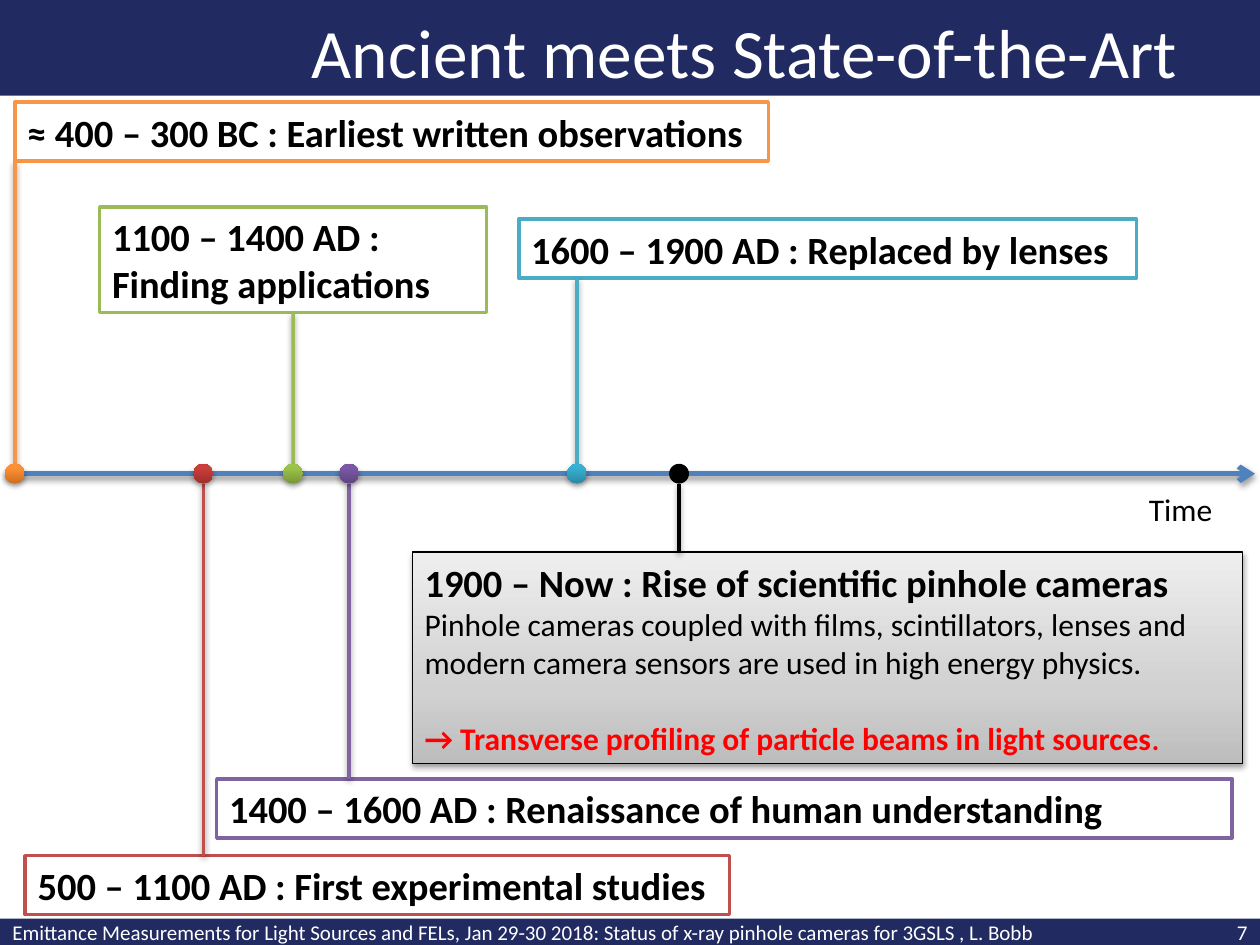
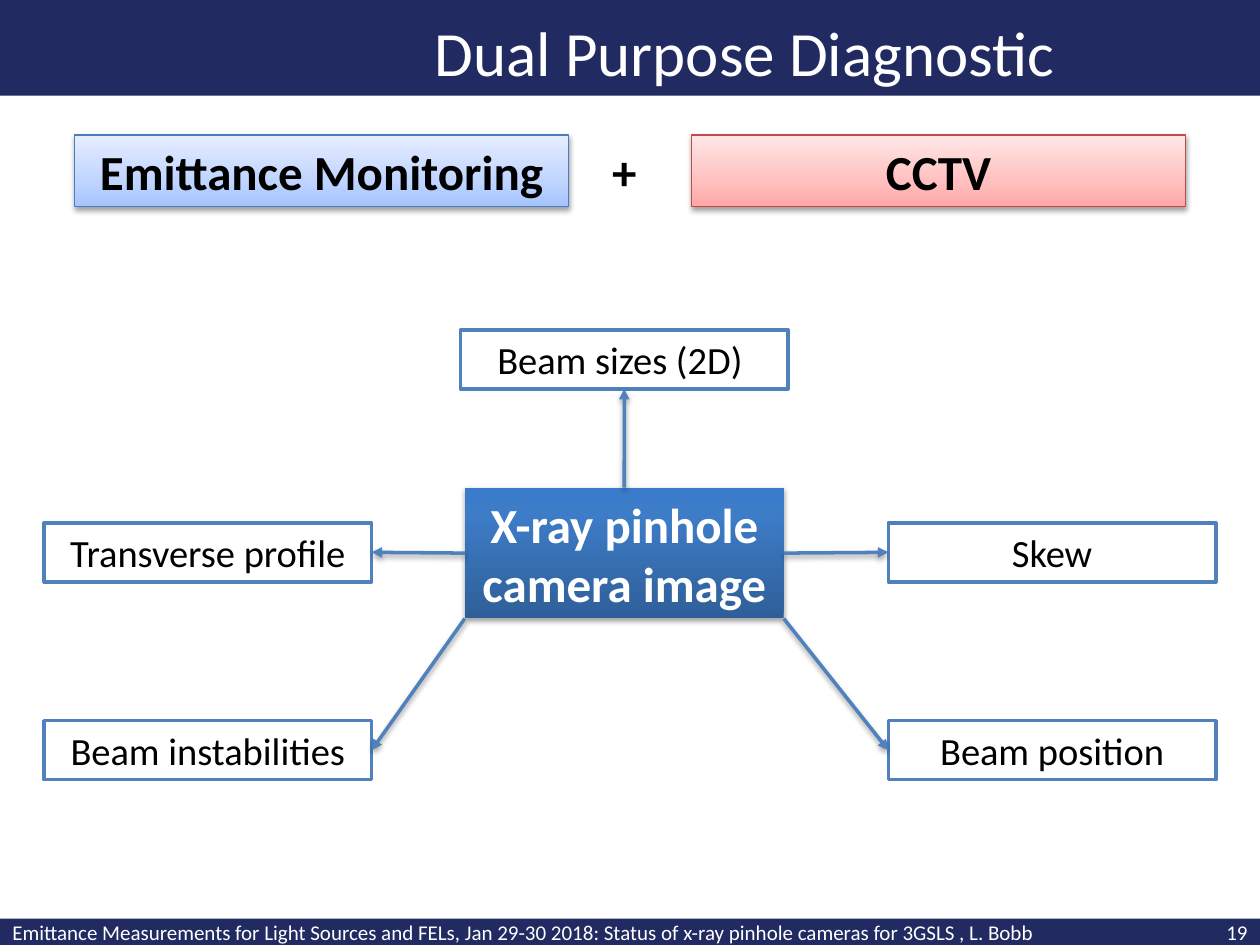
from lxml import etree
from pptx import Presentation
from pptx import util as u
from pptx.dml.color import RGBColor
from pptx.enum import shapes, text
from pptx.oxml import parse_xml
from pptx.oxml.ns import nsdecls, qn

FONT = "Calibri"
C = {
    "navy": "212B61", "white": "FFFFFF", "black": "000000", "alert": "FF0000",
    "blue": "4F81BD", "red": "C0504D", "green": "9BBB59",
    "purple": "8064A2", "teal": "4BACC6", "orange": "F79646",
    "blue edge": "4B7EBC", "red edge": "BF4C48",
}
# Middle stop in percent, then the colours from bottom to top
GRADIENTS = {
    "orange": (80, "CC6E20", "FF9034", "FF9136"),
    "red": (80, "9C2F2D", "CB3E3A", "CE3B37"),
    "green": (80, "779737", "9BC348", "9DC746"),
    "purple": (80, "5F4480", "7B58A6", "7C57A8"),
    "teal": (80, "2A88A2", "37B1D2", "34B4D6"),
    "blue": (80, "2F5F99", "3D7CC7", "3A7CCB"),
    "pale grey": (35, "BDBDBD", "D1D1D1", "EEEEEE"),
    "pale blue": (35, "A4C4FF", "BFD4FF", "E6EEFF"),
    "pale red": (35, "FFA6A5", "FFC0BF", "FFE7E7"),
}
SHADOW = (f'<a:effectLst {nsdecls("a")}><a:outerShdw blurRad="40000" dist="21000" '
          'dir="5400000" rotWithShape="0"><a:srgbClr val="000000">'
          '<a:alpha val="37000"/></a:srgbClr></a:outerShdw></a:effectLst>')
LEFT, CENTER, RIGHT = text.PP_ALIGN.LEFT, text.PP_ALIGN.CENTER, text.PP_ALIGN.RIGHT
RECT, OVAL = shapes.MSO_SHAPE.RECTANGLE, shapes.MSO_SHAPE.OVAL
TOP, LEFT_SIDE, BOTTOM, RIGHT_SIDE = range(4)


def add_box(s, at, paras=(), fill=None, grad=None, line=None, weight=2,
            kind=RECT, align=LEFT):
    """Add a shape, or a text box if it has neither fill nor gradient.

    Each paragraph is a list of runs (words, size, bold, colour name).
    """
    at = [u.Cm(v) for v in at]
    if fill or grad:
        sp = s.shapes.add_shape(kind, *at)
        if line:
            sp.line.color.rgb = RGBColor.from_string(C[line])
            sp.line.width = u.Pt(weight)
        else:
            sp.line.fill.background()
        sp.shadow.inherit = False
    else:
        sp = s.shapes.add_textbox(*at)
    if fill:
        sp.fill.solid()
        sp.fill.fore_color.rgb = RGBColor.from_string(C[fill])
    if grad:
        middle, *hues = GRADIENTS[grad]
        sp.fill.gradient()
        sp.fill.gradient_angle = 90
        stops = sp._element.spPr.find(".//" + qn("a:gsLst"))
        stops.clear()
        for pos, hue in zip((0, middle, 100), hues):
            gs = etree.SubElement(stops, qn("a:gs"), pos=str(pos * 1000))
            etree.SubElement(gs, qn("a:srgbClr"), val=hue)
        effects = sp._element.spPr.find(qn("a:effectLst"))
        effects.getparent().replace(effects, parse_xml(SHADOW))
    tf = sp.text_frame
    tf.word_wrap = True
    tf.vertical_anchor = text.MSO_ANCHOR.MIDDLE
    for i, runs in enumerate(paras):
        p = tf.add_paragraph() if i else tf.paragraphs[0]
        p.alignment = align
        for words, size, bold, colour in runs:
            r = p.add_run()
            r.text = words
            r.font.name = FONT
            r.font.size = u.Pt(size)
            r.font.bold = bold
            r.font.color.rgb = RGBColor.from_string(C[colour])
    return sp


def add_line(s, start, end, colour, weight=2, arrow=None):
    """Add a shadowed straight line, with an optional arrowhead at its end."""
    ln = s.shapes.add_connector(shapes.MSO_CONNECTOR.STRAIGHT,
                                *[u.Cm(v) for v in (*start, *end)])
    ln.line.color.rgb = RGBColor.from_string(C[colour])
    ln.line.width = u.Pt(weight)
    spPr = ln._element.spPr
    if arrow:
        etree.SubElement(spPr.find(qn("a:ln")), qn("a:tailEnd"), type=arrow)
    spPr.append(parse_xml(SHADOW))
    return ln


prs = Presentation()
prs.slide_width, prs.slide_height = u.Cm(25.4), u.Cm(19.05)

# Bands, title and footer shared by both slides
FOOTER = ("Emittance Measurements for Light Sources and FELs, Jan 29-30 2018: "
          "Status of x-ray pinhole cameras for 3GSLS , L. Bobb")
FOOT_Y, FOOT_H = 18.52, 0.53
slides = []
for title, size, number in (("Ancient meets State-of-the-Art", 39.6, "7"),
                            ("Dual Purpose Diagnostic", 36, "19")):
    s = prs.slides.add_slide(prs.slide_layouts[6])
    add_box(s, (0, FOOT_Y, 25.4, FOOT_H), fill="navy")
    add_box(s, (0, 0, 25.4, 1.93), fill="navy")
    add_box(s, (5.1, 0.33, 19.82, 1.4), [[(title, size, False, "white")]],
            align=CENTER)
    add_box(s, (0, FOOT_Y, 23.9, FOOT_H), [[(FOOTER, 12, False, "white")]])
    add_box(s, (24.2, FOOT_Y, 1.2, FOOT_H), [[(number, 12, False, "white")]],
            align=RIGHT)
    slides.append(s)
history, purposes = slides

# Timeline: colour, dot centre, box, heading
AXIS_Y, DOT, ROW_H = 9.55, 0.4, 1.19
add_box(history, (22.91, 9.75, 2.01, 1.02), [[("Time", 18, False, "black")]])
add_line(history, (0.1, AXIS_Y), (25.3, AXIS_Y), "blue", 3, "arrow")
eras = [
    ("orange", 0.3, (0.3, 2.06, 15.19, ROW_H),
     "≈ 400 – 300 BC : Earliest written observations"),
    ("red", 4.1, (0.51, 17.25, 14.2, ROW_H),
     "500 – 1100 AD : First experimental studies"),
    ("green", 5.91, (2.01, 4.17, 7.8, 2.13),
     "1100 – 1400 AD : Finding applications"),
    ("purple", 7.04, (4.37, 15.7, 20.47, ROW_H),
     "1400 – 1600 AD : Renaissance of human understanding"),
    ("teal", 11.63, (10.46, 4.42, 12.45, ROW_H),
     "1600 – 1900 AD : Replaced by lenses"),
    ("black", 13.69, (8.31, 11.13, 16.74, 4.27),
     "1900 – Now : Rise of scientific pinhole cameras"),
]
for colour, x, at, heading in eras:
    left, top, width, height = at
    above = top < AXIS_Y
    now = colour == "black"
    paras = [[(heading, 22, True, "black")]]
    if now:
        paras += [
            [("Pinhole cameras coupled with films, scintillators, lenses and "
              "modern camera sensors are used in high energy physics.",
              18, False, "black")],
            [("→ Transverse profiling of particle beams in light sources",
              18, True, "alert"), (".", 16, True, "alert")],
        ]
    sp = add_box(history, at, paras, fill=None if now else "white",
                 grad="pale grey" if now else None,
                 line=colour, weight=0.75 if now else 2)
    if now:
        sp.text_frame.paragraphs[-1].space_before = u.Pt(22)
    dot_edge = AXIS_Y - DOT / 2 if above else AXIS_Y + DOT / 2
    stem = add_line(history, (x, dot_edge),
                    (x, top + height if above else top), colour)
    if abs(left + width / 2 - x) < 0.02:
        stem.end_connect(sp, BOTTOM if above else TOP)
    add_box(history, (x - DOT / 2, AXIS_Y - DOT / 2, DOT, DOT), kind=OVAL,
            fill="black" if now else None, grad=None if now else colour)

# The two purposes
PURPOSE_Y, PURPOSE_H = 2.72, 1.45
for x, width, words, grad, edge in (
        (1.5, 9.96, "Emittance Monitoring", "pale blue", "blue edge"),
        (12.09, 0.99, "+", None, None),
        (13.94, 9.96, "CCTV", "pale red", "red edge")):
    add_box(purposes, (x, PURPOSE_Y, width, PURPOSE_H),
            [[(words, 28, True, "black")]], grad=grad, line=edge, weight=0.75,
            align=CENTER if grad else LEFT)

# What the camera image yields: words, left, top, hub side or corner, box side
HUB_X, HUB_Y, HUB_W, HUB_H = 9.37, 9.83, 6.43, 2.64
hub = add_box(purposes, (HUB_X, HUB_Y, HUB_W, HUB_H),
              [[("X-ray pinhole camera image", 28, True, "white")]],
              grad="blue", align=CENTER)
RESULT_W = 6.6
WEST, EAST, MID_Y, LOW_Y = 0.89, 17.91, 10.54, 14.53
bottom_left = (HUB_X, HUB_Y + HUB_H)
bottom_right = (HUB_X + HUB_W, HUB_Y + HUB_H)
for words, x, y, origin, side in (
        ("Beam sizes (2D) ", HUB_X + (HUB_W - RESULT_W) / 2, 6.65, TOP, BOTTOM),
        ("Transverse profile", WEST, MID_Y, LEFT_SIDE, RIGHT_SIDE),
        ("Beam instabilities", WEST, LOW_Y, bottom_left, RIGHT_SIDE),
        ("Skew", EAST, MID_Y, RIGHT_SIDE, LEFT_SIDE),
        ("Beam position", EAST, LOW_Y, bottom_right, LEFT_SIDE)):
    sp = add_box(purposes, (x, y, RESULT_W, ROW_H),
                 [[(words, 22, False, "black")]],
                 fill="white", line="blue", align=CENTER)
    corner = isinstance(origin, tuple)
    arrow = add_line(purposes, origin if corner else (HUB_X, HUB_Y), (x, y),
                     "blue", arrow="triangle")
    if not corner:
        arrow.begin_connect(hub, origin)
    arrow.end_connect(sp, side)

prs.save("out.pptx")
